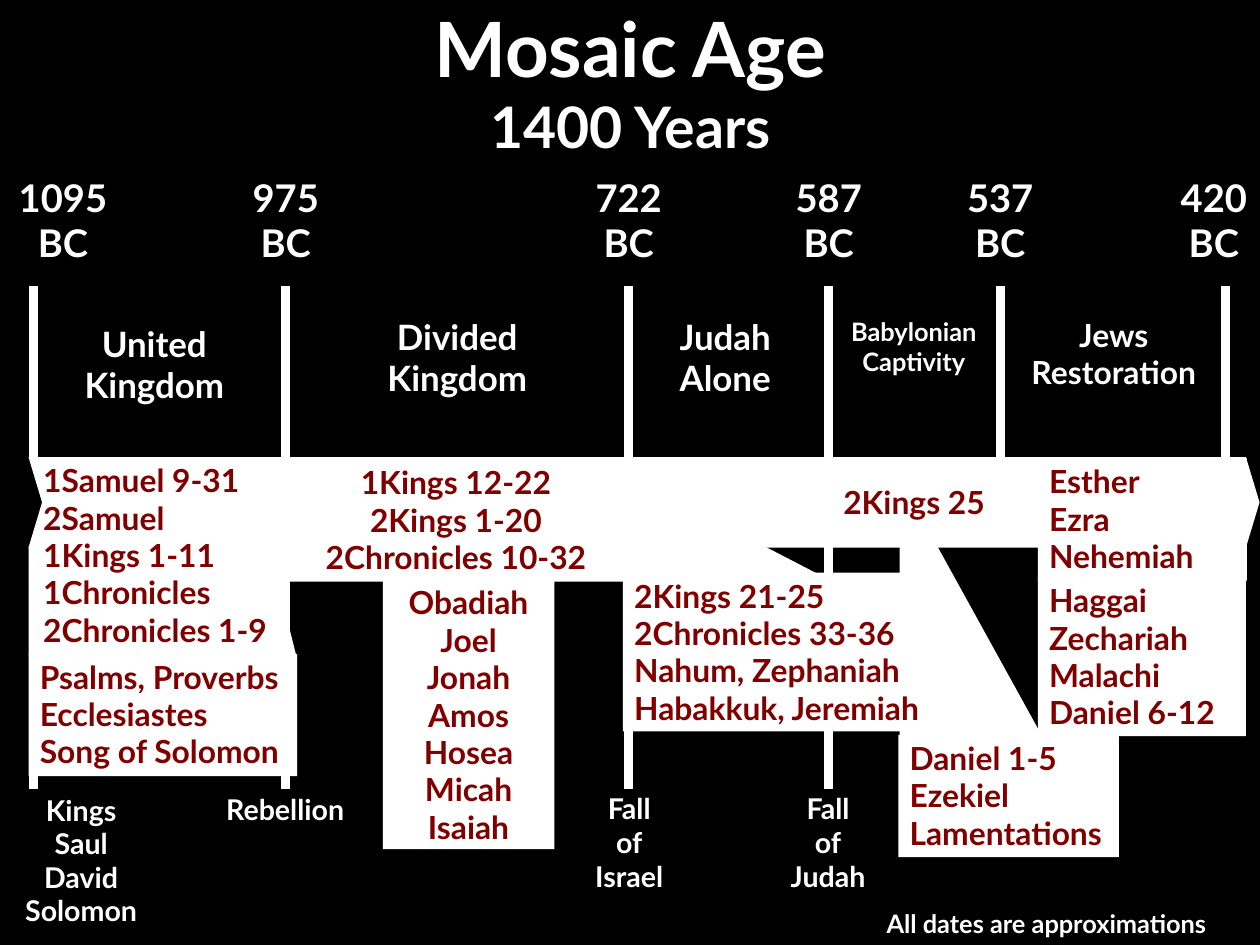
import pptx
import pptx.dml.color
import pptx.enum.shapes
import pptx.enum.text
import pptx.oxml
import pptx.util
from pptx.util import Inches

COLORS = {"black": "000000", "white": "FFFFFF", "maroon": "800000"}
FONT = "Lato"
CM_PER_INCH = 2.54
SHAPES = pptx.enum.shapes.MSO_SHAPE
ALIGN = pptx.enum.text.PP_ALIGN

# Date, centre of its label, position of its tick
DATES = [
    ("1095", 0.55, 0.29),
    ("975", 2.5, 2.5),
    ("722", 5.5, 5.5),
    ("587", 7.25, 7.25),
    ("537", 8.75, 8.75),
    ("420", 10.62, 10.72),
]
# Position and top of the ticks below the band
LOWER_TICKS = [(0.29, 5.4), (2.5, 5.01), (5.5, 4.76), (7.25, 4.76)]

# Text, left, top, width, height, size
PERIODS = [
    ("United\nKingdom", 0.49, 2.79, 1.72, 0.81, 22),
    ("Divided\nKingdom", 3.14, 2.73, 1.72, 0.81, 22),
    ("Judah\nAlone", 5.76, 2.73, 1.17, 0.81, 22),
    ("Babylonian\nCaptivity", 7.2, 2.73, 1.59, 0.61, 16),
    ("Jews\nRestoration", 8.73, 2.73, 2.03, 0.74, 20),
]
EVENTS = [
    ("Kings\nSaul\nDavid\nSolomon", 0, 6.9, 1.42, 1.26, 18),
    ("Rebellion", 1.74, 6.89, 1.51, 0.39, 18),
    ("Fall\nof\nIsrael", 5.01, 6.89, 0.99, 0.97, 18),
    ("Fall\nof\nJudah", 6.75, 6.89, 0.99, 0.97, 18),
    ("All dates are approximations", 7.25, 7.91, 3.81, 0.36, 16),
]

# Text, left, top, width, height, alignment
BOOKS = [
    ("1Kings 12-22\n2Kings 1-20\n2Chronicles 10-32",
     2.45, 4.02, 3.08, 1.07, ALIGN.CENTER),
    ("2Kings 21-25\n2Chronicles 33-36\nNahum, Zephaniah\nHabakkuk, Jeremiah",
     5.45, 5.01, 2.85, 1.39, ALIGN.LEFT),
    ("Psalms, Proverbs\nEcclesiastes\nSong of Solomon",
     0.25, 5.72, 2.35, 1.07, ALIGN.LEFT),
    ("Obadiah\nJoel\nJonah\nAmos\nHosea\nMicah\nIsaiah",
     3.35, 5.07, 1.5, 2.36, ALIGN.CENTER),
    ("Daniel 1-5\nEzekiel\nLamentations", 7.86, 6.43, 1.93, 1.07, ALIGN.LEFT),
    ("2Kings 25", 7.28, 4.19, 1.47, 0.42, ALIGN.LEFT),
    ("Esther\nEzra\nNehemiah", 9.08, 4.01, 1.83, 1.07, ALIGN.LEFT),
    ("Haggai\nZechariah\nMalachi\nDaniel 6-12",
     9.08, 5.05, 1.82, 1.39, ALIGN.LEFT),
]


def rgb(name):
    return pptx.dml.color.RGBColor.from_string(COLORS[name])


def write(sp, text, sizes=(20,), color="white", align=ALIGN.CENTER):
    """Write one paragraph per line; the last size serves all further lines."""
    tf = sp.text_frame
    tf.word_wrap = True
    tf.vertical_anchor = pptx.enum.text.MSO_ANCHOR.TOP
    for i, line in enumerate(text.split("\n")):
        p = tf.add_paragraph() if i else tf.paragraphs[0]
        p.alignment = align
        p.line_spacing = 0.98
        r = p.add_run()
        r.text = line
        r.font.name = FONT
        r.font.size = pptx.util.Pt(sizes[min(i, len(sizes) - 1)])
        r.font.bold = True
        r.font.color.rgb = rgb(color)


def add_text(s, text, left, top, width, height, *sizes, **fmt):
    sp = s.shapes.add_textbox(*map(Inches, (left, top, width, height)))
    write(sp, text, sizes=sizes, **fmt)


def add_white(s, kind, left, top, width, height):
    sp = s.shapes.add_shape(kind, *map(Inches, (left, top, width, height)))
    sp.shadow.inherit = False
    sp.fill.solid()
    sp.fill.fore_color.rgb = rgb("white")
    sp.line.fill.background()
    return sp


def add_tick(s, x, top, bottom):
    line = s.shapes.add_connector(
        pptx.enum.shapes.MSO_CONNECTOR.STRAIGHT,
        *map(Inches, (x, bottom, x, top)))
    line.line.color.rgb = rgb("white")
    line.line.width = pptx.util.Pt(5.75)
    props = line.element.spPr
    props.append(props.makeelement(pptx.oxml.ns.qn("a:effectLst"), {}))


def main():
    # Slide of 28 by 21 cm
    prs = pptx.Presentation()
    prs.slide_width = Inches(28 / CM_PER_INCH)
    prs.slide_height = Inches(21 / CM_PER_INCH)
    s = prs.slides.add_slide(prs.slide_layouts[6])
    s.background.fill.solid()
    s.background.fill.fore_color.rgb = rgb("black")

    # Title
    add_text(s, "Mosaic Age\n1400 Years", 3.28, 0, 4.47, 1.46, 48, 36)

    # Dates and ticks
    for year, center, x in DATES:
        add_text(s, f"{year}\nBC", center - 0.56, 1.5, 1.12, 0.88, 24)
        add_tick(s, x, 2.5, 4)
    for x, top in LOWER_TICKS:
        add_tick(s, x, top, 6.9)

    # Timeline band and its slanted links to the book boxes
    add_white(s, SHAPES.RIGHT_TRIANGLE, 7.87, 4.18, 1.33, 2.41)
    add_white(s, SHAPES.RIGHT_TRIANGLE, 5.53, 4.18, 1.68, 0.87)
    band = add_white(s, SHAPES.CHEVRON, 0.25, 4, 10.77, 0.79)
    band.adjustments[0] = 0.15
    add_white(s, SHAPES.RECTANGLE, 0.25, 4.78, 2.22, 0.95)
    add_white(s, SHAPES.RIGHT_TRIANGLE, 2.27, 4.45, 0.32, 1.28)

    # Books
    for text, left, top, width, height, align in BOOKS:
        sp = add_white(s, SHAPES.RECTANGLE, left, top, width, height)
        write(sp, text, color="maroon", align=align)
    add_text(s, "1Samuel 9-31\n2Samuel\n1Kings 1-11\n1Chronicles\n2Chronicles 1-9",
             0.28, 4, 2.19, 1.72, 20, color="maroon", align=ALIGN.LEFT)

    # Periods above the band, events below it
    for label in PERIODS + EVENTS:
        add_text(s, *label)

    prs.save("out.pptx")


if __name__ == "__main__":
    main()
